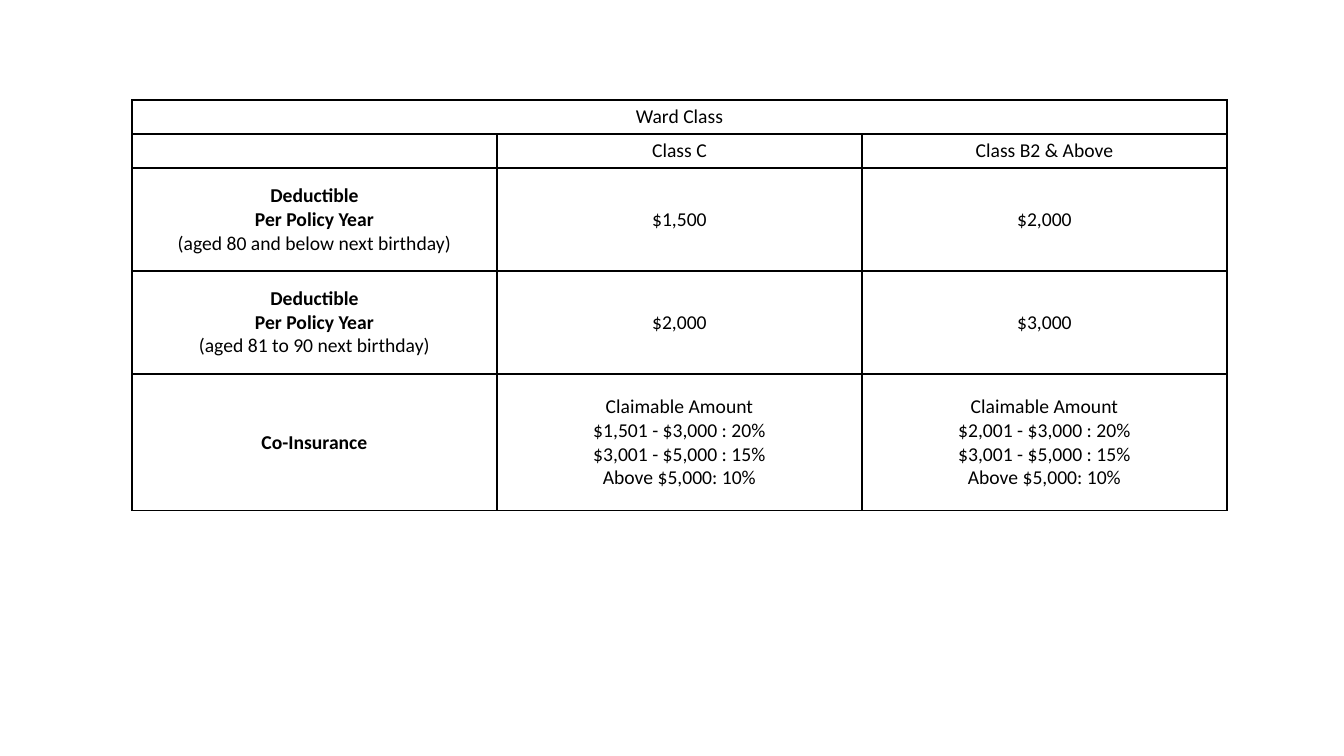
from dataclasses import dataclass

from lxml import etree
from pptx import Presentation
from pptx import util as u
from pptx.dml.color import RGBColor
from pptx.enum import text
from pptx.oxml.ns import qn

PX = 914400 / 100.8


@dataclass(frozen=True)
class Theme:
    font: str = "Calibri"
    size: int = 14
    ink: str = "000000"
    paper: str = "FFFFFF"
    rule: int = 1


THEME = Theme()

DEDUCTIBLE = "Deductible\nPer Policy Year\n"
CO_INSURANCE = "\n$3,001 - $5,000 : 15%\nAbove $5,000: 10%"
WARD_ROWS = [
    (34, [("", "Ward Class"), ("", ""), ("", "")]),
    (34, [("", ""), ("", "Class C"), ("", "Class B2 & Above")]),
    (103, [(DEDUCTIBLE, "(aged 80 and below next birthday)"),
           ("", "$1,500"), ("", "$2,000")]),
    (103, [(DEDUCTIBLE, "(aged 81 to 90 next birthday)"),
           ("", "$2,000"), ("", "$3,000")]),
    (137, [("Co-Insurance", ""),
           ("", "Claimable Amount\n$1,501 - $3,000 : 20%" + CO_INSURANCE),
           ("", "Claimable Amount\n$2,001 - $3,000 : 20%" + CO_INSURANCE)]),
]


def px(length):
    return u.Emu(round(length * PX))


def write(paragraph, wording, bold=False, size=THEME.size, color=THEME.ink):
    for index, line in enumerate(wording.split("\n")):
        if index:
            paragraph.add_line_break()
        if line:
            run = paragraph.add_run()
            run.text = line
            run.font.name = THEME.font
            run.font.size = u.Pt(size)
            run.font.bold = bold
            run.font.color.rgb = RGBColor.from_string(color)


def frame_cell(cell):
    properties = cell._tc.get_or_add_tcPr()
    for side in ("lnL", "lnR", "lnT", "lnB"):
        border = etree.SubElement(properties, qn(f"a:{side}"), w=str(u.Pt(THEME.rule)))
        fill = etree.SubElement(border, qn("a:solidFill"))
        etree.SubElement(fill, qn("a:srgbClr"), val=THEME.ink)
    cell.fill.solid()
    cell.fill.fore_color.rgb = RGBColor.from_string(THEME.paper)


def fill_cell(cell, heading, detail):
    cell.margin_left = cell.margin_right = cell.margin_top = cell.margin_bottom = 0
    cell.vertical_anchor = text.MSO_ANCHOR.MIDDLE
    frame_cell(cell)
    paragraph = cell.text_frame.paragraphs[0]
    paragraph.alignment = text.PP_ALIGN.CENTER
    write(paragraph, heading, bold=True)
    write(paragraph, detail)


def add_ward_table(slide, left, top, width):
    column_count = len(WARD_ROWS[0][1])
    height = sum(row_height for row_height, _ in WARD_ROWS)
    benefits = slide.shapes.add_table(
        len(WARD_ROWS), column_count, px(left), px(top), px(width), px(height)
    ).table
    benefits.first_row = False
    benefits.horz_banding = False
    for column in benefits.columns:
        column.width = px(width / column_count)
    for row, (row_height, entries) in enumerate(WARD_ROWS):
        benefits.rows[row].height = px(row_height)
        for column, (heading, detail) in enumerate(entries):
            fill_cell(benefits.cell(row, column), heading, detail)
    benefits.cell(0, 0).merge(benefits.cell(0, column_count - 1))


def main():
    deck = Presentation()
    deck.slide_width, deck.slide_height = px(1344), px(756)
    slide = deck.slides.add_slide(deck.slide_layouts[6])
    add_ward_table(slide, left=132, top=100, width=1095)
    deck.save("out.pptx")


if __name__ == "__main__":
    main()
